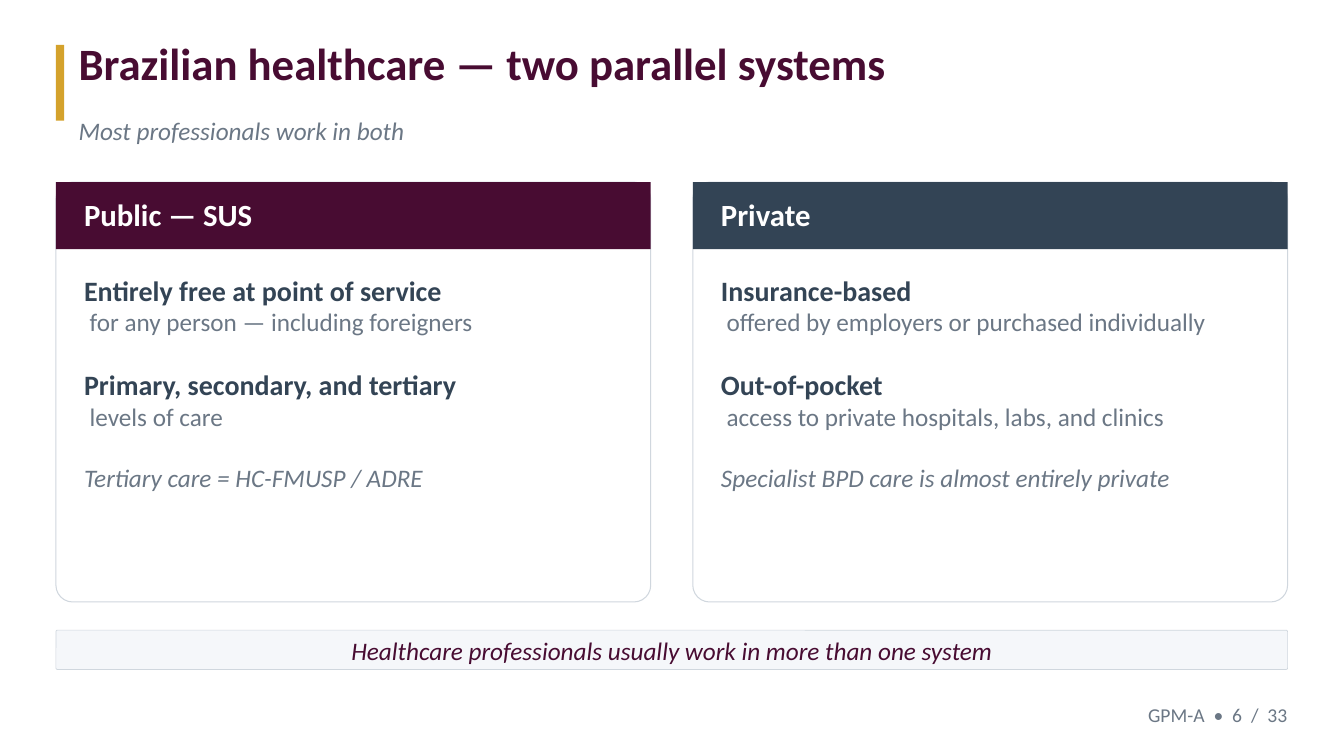
from pptx import Presentation
from pptx.dml.color import RGBColor
from pptx.enum.shapes import MSO_SHAPE
from pptx.enum.text import MSO_ANCHOR, PP_ALIGN
from pptx.util import Cm, Pt

RECT = MSO_SHAPE.RECTANGLE
ROUND = MSO_SHAPE.ROUNDED_RECTANGLE
TOP = MSO_ANCHOR.TOP
LEFT, CENTER, RIGHT = PP_ALIGN.LEFT, PP_ALIGN.CENTER, PP_ALIGN.RIGHT

WINE = RGBColor(0x48, 0x0C, 0x32)
GOLD = RGBColor(0xD4, 0xA2, 0x2C)
SLATE = RGBColor(0x33, 0x44, 0x55)
GRAY = RGBColor(0x6B, 0x77, 0x85)
EDGE = RGBColor(0xD0, 0xD7, 0xDE)
PALE = RGBColor(0xF5, 0xF7, 0xFA)
WHITE = RGBColor(0xFF, 0xFF, 0xFF)

TITLE = {"size": Pt(32), "bold": True, "color": WINE}
HEAD = {"size": Pt(22), "bold": True, "color": WHITE}
LEAD = {"size": Pt(20), "bold": True, "color": SLATE}
PLAIN = {"size": Pt(18), "bold": False, "color": GRAY}
ASIDE = {"size": Pt(18), "italic": True, "color": GRAY}
CLAIM = {"size": Pt(18), "italic": True, "color": WINE}
FOOT = {"size": Pt(14), "color": GRAY}

MARGIN = 1.41
PAD = 0.71
TITLE_X = 1.98
PANEL_Y, PANEL_W, PANEL_H = 4.59, 14.99, 10.58
PANEL_STEP = 16.05
GAP = Pt(22)
INDENT = Cm(0.14)

PANELS = [
    ("Public — SUS", WINE, [
        ("Entirely free at point of service",
         "for any person — including foreigners"),
        ("Primary, secondary, and tertiary", "levels of care"),
    ], "Tertiary care = HC-FMUSP / ADRE"),
    ("Private", SLATE, [
        ("Insurance-based", "offered by employers or purchased individually"),
        ("Out-of-pocket", "access to private hospitals, labs, and clinics"),
    ], "Specialist BPD care is almost entirely private"),
]


def style(font, form):
    font.name = "Calibri"
    for key, value in form.items():
        if key == "color":
            font.color.rgb = value
        else:
            setattr(font, key, value)


def write(para, text, form, align=LEFT):
    para.alignment = align
    run = para.add_run()
    run.text = text
    style(run.font, form)


def place(shape, box):
    for key, value in zip(("left", "top", "width", "height"), box):
        setattr(shape, key, Cm(value))


def prepare(frame):
    frame.word_wrap = True
    frame.vertical_anchor = TOP
    for side in ("left", "top", "right", "bottom"):
        setattr(frame, f"margin_{side}", 0)


def add_text(slide, box, text, form, align=LEFT):
    frame = slide.shapes.add_textbox(*map(Cm, box)).text_frame
    prepare(frame)
    write(frame.paragraphs[0], text, form, align)
    return frame


def add_block(slide, kind, box, fill, width=0):
    shape = slide.shapes.add_shape(kind, *map(Cm, box))
    shape.shadow.inherit = False
    shape.fill.solid()
    shape.fill.fore_color.rgb = fill
    if kind == ROUND:
        shape.adjustments[0] = 0.04
    if width:
        shape.line.color.rgb = EDGE
        shape.line.width = Pt(width)
    else:
        shape.line.fill.background()


def add_title(slide, text):
    title = slide.shapes.title
    place(title, (TITLE_X, 0.91, 30.48, 1.98))
    prepare(title.text_frame)
    write(title.text_frame.paragraphs[0], text, TITLE)


def add_panel(slide, x, name, color, points, remark):
    add_block(slide, ROUND, (x, PANEL_Y, PANEL_W, PANEL_H), WHITE, 0.75)
    add_block(slide, RECT, (x, PANEL_Y, PANEL_W, 1.69), color)
    add_text(slide, (x + PAD, PANEL_Y + 0.35, 14.11, 1.13), name, HEAD)
    lines = [pair for lead, detail in points
             for pair in ((lead, LEAD), (detail, PLAIN))]
    lines.append((remark, ASIDE))
    box = (x + PAD, PANEL_Y + 2.29, 14.11, 5.57)
    frame = add_text(slide, box, *lines[0])
    for text, form in lines[1:]:
        para = frame.add_paragraph()
        write(para, text, form)
        if form is PLAIN:
            para._p.get_or_add_pPr().set("marL", str(INDENT))
        else:
            para.space_before = GAP


def main():
    deck = Presentation()
    deck.slide_width, deck.slide_height = Cm(33.87), Cm(19.05)
    slide = deck.slides.add_slide(deck.slide_layouts[5])
    add_block(slide, RECT, (MARGIN, 1.13, 0.21, 1.91), GOLD)
    add_title(slide, "Brazilian healthcare — two parallel systems")
    add_text(slide, (TITLE_X, 2.9, 30.48, 1.06),
             "Most professionals work in both", ASIDE)
    for i, panel in enumerate(PANELS):
        add_panel(slide, MARGIN + i * PANEL_STEP, *panel)
    add_block(slide, ROUND, (MARGIN, 15.88, 31.04, 0.99), PALE, 0.5)
    add_text(slide, (MARGIN + PAD, 16.02, 29.63, 0.76),
             "Healthcare professionals usually work in more than one system",
             CLAIM, CENTER)
    add_text(slide, (27.16, 17.71, 5.29, 0.61),
             "GPM-A  •  6  /  33", FOOT, RIGHT)
    deck.save("out.pptx")


if __name__ == "__main__":
    main()
